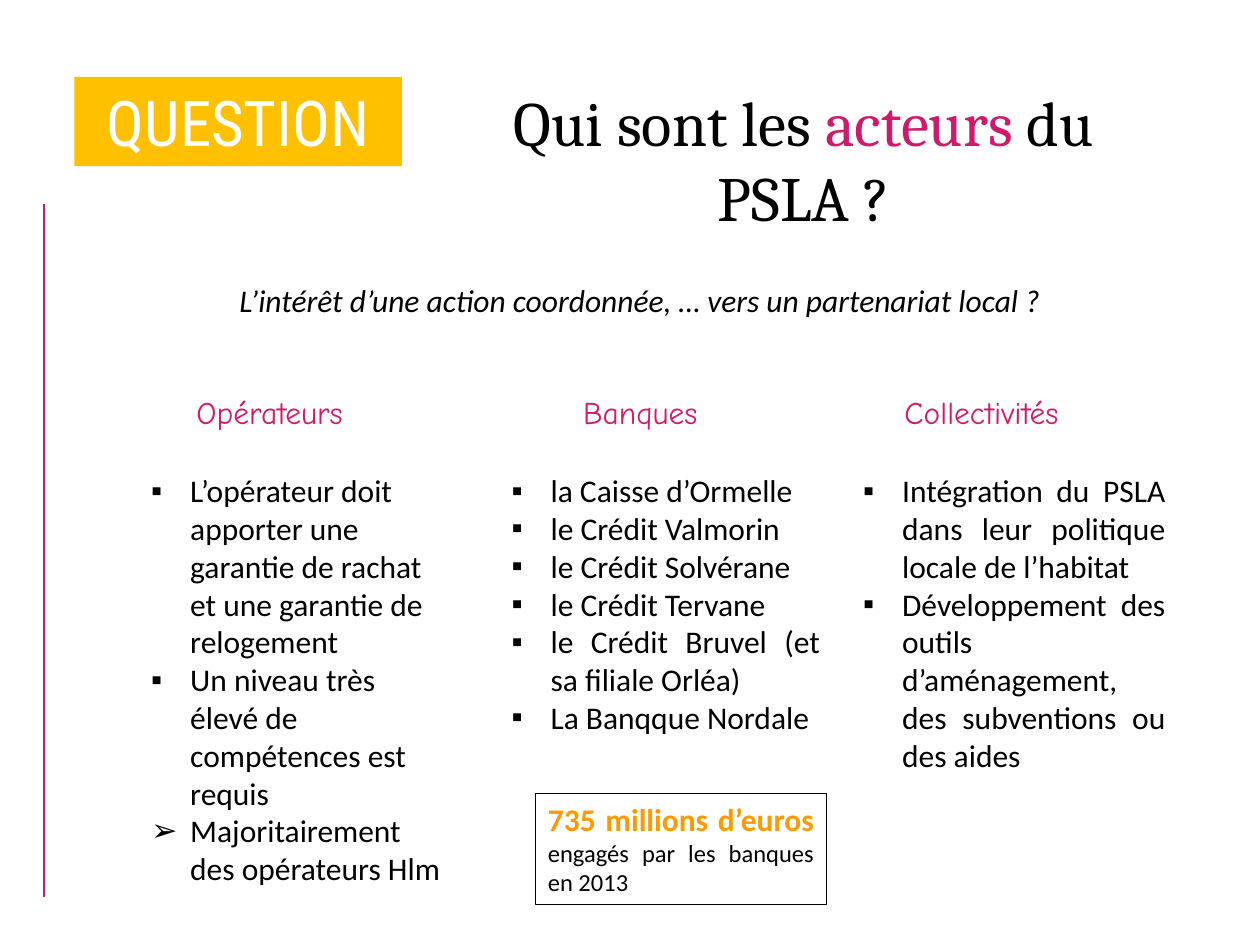
from lxml import etree
from pptx import Presentation
from pptx.dml.color import RGBColor
from pptx.enum.shapes import MSO_CONNECTOR, MSO_SHAPE
from pptx.enum.text import MSO_ANCHOR, MSO_AUTO_SIZE, PP_ALIGN
from pptx.oxml.ns import qn
from pptx.util import Inches, Pt

LEFT, CENTER, JUSTIFY = PP_ALIGN.LEFT, PP_ALIGN.CENTER, PP_ALIGN.JUSTIFY
COLORS = {"black": "000000", "white": "FFFFFF", "pink": "D1196C",
          "gold": "FFC000", "orange": "FF9900"}

TITLE = [("Qui sont les ", "black"), ("acteurs ", "pink"), ("du PSLA ?", "black")]
SUBTITLE = "L’intérêt d’une action coordonnée, … vers un partenariat local ?"
COLUMNS = [
    {"head": "Opérateurs", "head_x": 1.46, "head_w": 1.81,
     "x": 1.1, "w": 2.52, "h": 3.43, "align": LEFT,
     "items": [("▪", "L’opérateur doit apporter une garantie de rachat et une garantie de relogement"),
               ("▪", "Un niveau très élevé de compétences est requis"),
               ("➢", "Majoritairement des opérateurs Hlm")]},
    {"head": "Banques", "head_x": 4.53, "head_w": 1.5,
     "x": 3.96, "w": 2.65, "h": 2.22, "align": JUSTIFY,
     "items": [("▪", "la Caisse d’Ormelle"),
               ("▪", "le Crédit Valmorin"),
               ("▪", "le Crédit Solvérane"),
               ("▪", "le Crédit Tervane"),
               ("▪", "le Crédit Bruvel (et sa filiale Orléa)"),
               ("▪", "La Banqque Nordale")]},
    {"head": "Collectivités", "head_x": 7.08, "head_w": 1.93,
     "x": 6.75, "w": 2.6, "h": 2.52, "align": JUSTIFY,
     "items": [("▪", "Intégration du PSLA dans leur politique locale de l’habitat"),
               ("▪", "Développement des outils d’aménagement, des subventions ou des aides")]},
]
HEAD_Y, LIST_Y, HEAD_H = 3.07, 3.69, 0.4
INDENT = Inches(0.31)


def color(name):
    return RGBColor.from_string(COLORS[name])


def box(*lengths):
    return [Inches(v) for v in lengths]


def place(sp, *lengths):
    sp.left, sp.top, sp.width, sp.height = box(*lengths)
    return sp


def prepare(sp):
    tf = sp.text_frame
    tf.word_wrap = True
    tf.auto_size = MSO_AUTO_SIZE.NONE
    tf.vertical_anchor = MSO_ANCHOR.TOP
    return tf


def format_paragraph(p, align, bullet=None):
    p.alignment = align
    p.space_before = Pt(0)
    pPr = p._p.get_or_add_pPr()
    pPr.set("marL", str(INDENT if bullet else 0))
    pPr.set("indent", str(-INDENT if bullet else 0))
    bu = etree.SubElement(pPr, qn("a:buChar" if bullet else "a:buNone"))
    if bullet:
        bu.set("char", bullet)


def add_run(p, text, size, font, col, bold=False, italic=False):
    r = p.add_run()
    r.text = text
    f = r.font
    f.size, f.name, f.bold, f.italic = Pt(size), font, bold, italic
    f.color.rgb = color(col)


def write(sp, align, runs):
    p = prepare(sp).paragraphs[0]
    format_paragraph(p, align)
    for run in runs:
        add_run(p, *run)


def write_list(sp, items, align):
    tf = prepare(sp)
    for i, (bullet, text) in enumerate(items):
        p = tf.add_paragraph() if i else tf.paragraphs[0]
        format_paragraph(p, align, bullet)
        add_run(p, text, 18, "Calibri", "black")


def add_rect(s, *lengths):
    sp = s.shapes.add_shape(MSO_SHAPE.RECTANGLE, *box(*lengths))
    sp.shadow.inherit = False
    return sp


def main():
    prs = Presentation()
    prs.slide_width, prs.slide_height = box(10, 7.5)
    s = prs.slides.add_slide(prs.slide_layouts.get_by_name("Comparison"))
    bodies = [ph for ph in s.placeholders if 1 <= ph.placeholder_format.idx <= 4]

    write(place(s.shapes.title, 3.27, 0.61, 6.22, 1.31), CENTER,
          [(text, 36, "Cambria", col) for text, col in TITLE])
    write(place(bodies[0], 0.59, 2.18, 8.98, 0.4), CENTER,
          [(SUBTITLE, 18, "Calibri", "black", False, True)])

    tag = add_rect(s, 0.59, 0.61, 2.6, 0.71)
    tag.fill.solid()
    tag.fill.fore_color.rgb = color("gold")
    tag.line.fill.background()
    write(tag, CENTER, [("QUESTION", 36, "Roboto Condensed", "white")])

    rule = s.shapes.add_connector(MSO_CONNECTOR.STRAIGHT, *box(0.35, 1.62, 0.35, 7.12))
    rule.line.color.rgb = color("pink")
    rule.line.width = Pt(1.5)
    etree.SubElement(rule._element.spPr, qn("a:effectLst"))

    for body, col in zip(bodies[1:], COLUMNS):
        head = s.shapes.add_textbox(*box(col["head_x"], HEAD_Y, col["head_w"], HEAD_H))
        write(head, LEFT, [(col["head"], 18, "Comic Neue", "pink")])
        place(body, col["x"], LIST_Y, col["w"], col["h"])
        write_list(body, col["items"], col["align"])

    figure = add_rect(s, 4.25, 6.3, 2.31, 0.88)
    figure.fill.background()
    figure.line.color.rgb = color("black")
    figure.line.width = Pt(0.75)
    write(figure, JUSTIFY,
          [("735 millions d’euros ", 18, "Calibri", "orange", True),
           ("engagés par les banques en 2013", 14, "Calibri", "black")])

    prs.save("out.pptx")


if __name__ == "__main__":
    main()
